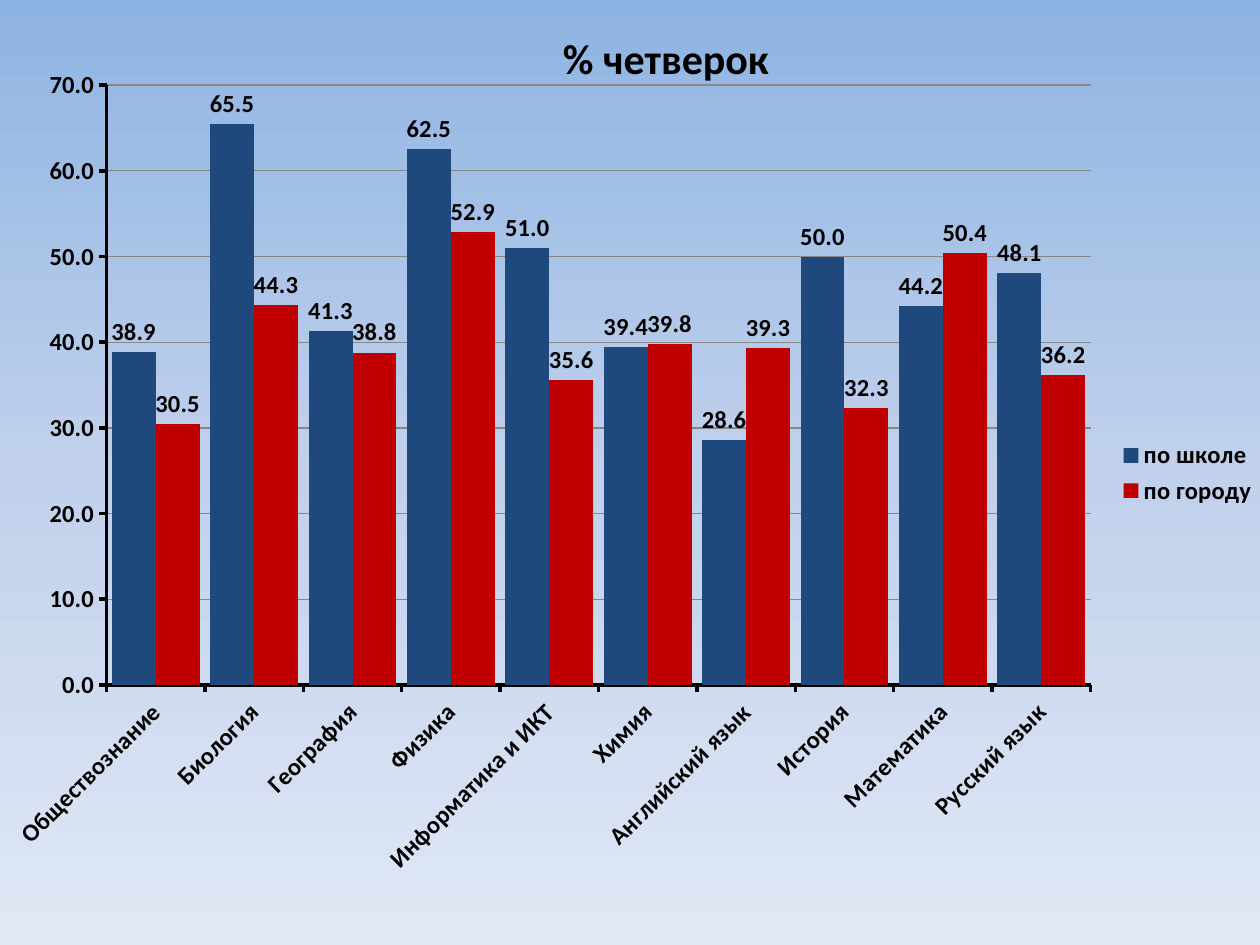
from copy import deepcopy

from pptx import Presentation
from pptx.chart.data import CategoryChartData
from pptx.dml.color import RGBColor
from pptx.enum.chart import (XL_CHART_TYPE, XL_LABEL_POSITION,
                             XL_LEGEND_POSITION, XL_TICK_MARK)
from pptx.enum.text import MSO_ANCHOR, PP_ALIGN
from pptx.oxml import parse_xml
from pptx.oxml.ns import nsdecls, qn
from pptx.util import Inches, Pt

BLACK = RGBColor(0x00, 0x00, 0x00)
GRID_GREY = RGBColor(0x87, 0x87, 0x87)
SCHOOL_BLUE = RGBColor(0x1F, 0x49, 0x7D)
CITY_RED = RGBColor(0xC0, 0x00, 0x00)
SKY = [RGBColor(0x8E, 0xB4, 0xE3), RGBColor(0xC1, 0xD1, 0xEC),
       RGBColor(0xE0, 0xE8, 0xF5)]

SUBJECTS = ["Обществознание", "Биология", "География", "Физика",
            "Информатика и ИКТ", "Химия", "Английский язык", "История",
            "Математика", "Русский язык"]
SERIES = [
    ("по школе", SCHOOL_BLUE,
     [38.9, 65.5, 41.3, 62.5, 51, 39.4, 28.6, 50, 44.2, 48.1]),
    ("по городу", CITY_RED,
     [30.5, 44.3, 38.8, 52.9, 35.6, 39.8, 39.3, 32.3, 50.4, 36.2]),
]
# Inner plot area as fractions of the chart frame
PLOT_AREA = {"x": 0.092, "y": 0.037, "w": 0.768, "h": 0.716}


class SlideBuilder:
    font_name = "Calibri"
    title_size = Pt(24)
    chart_size = Pt(14)

    def __init__(self, slide):
        self.slide = slide

    def style_font(self, font, size):
        font.name = self.font_name
        font.size = size
        font.bold = True
        font.color.rgb = BLACK

    def background(self, colors):
        fill = self.slide.background.fill
        fill.gradient()
        fill.gradient_angle = 270
        # The default gradient has two stops: add a middle one
        stop_list = self.slide.element.find(".//" + qn("a:gsLst"))
        stop_list.insert(1, deepcopy(stop_list[0]))
        for index, (stop, color) in enumerate(zip(fill.gradient_stops, colors)):
            stop.position = index / (len(colors) - 1)
            stop.color.rgb = color

    def title(self, text, left, top, width, height):
        title = self.slide.shapes.title
        title.left, title.top = Inches(left), Inches(top)
        title.width, title.height = Inches(width), Inches(height)
        frame = title.text_frame
        frame.word_wrap = False
        # No side insets, so that the title fits on one line
        frame.margin_left = frame.margin_right = 0
        frame.vertical_anchor = MSO_ANCHOR.TOP
        paragraph = frame.paragraphs[0]
        paragraph.alignment = PP_ALIGN.CENTER
        run = paragraph.add_run()
        run.text = text
        self.style_font(run.font, self.title_size)

    def column_chart(self, categories, series, left, top, width, height):
        data = CategoryChartData(number_format="0.0")
        data.categories = categories
        for name, _, values in series:
            data.add_series(name, values)
        chart = self.slide.shapes.add_chart(
            XL_CHART_TYPE.COLUMN_CLUSTERED, Inches(left), Inches(top),
            Inches(width), Inches(height), data).chart
        chart.has_title = False
        chart.font.name = self.font_name
        chart.font.size = Pt(10)
        chart.font.color.rgb = BLACK

        # Columns and their labels
        plot = chart.plots[0]
        plot.gap_width = 24
        plot.overlap = 0
        plot.vary_by_categories = False
        for column, (_, color, _) in zip(plot.series, series):
            column.format.fill.solid()
            column.format.fill.fore_color.rgb = color
            column.invert_if_negative = False
            labels = column.data_labels
            labels.show_value = True
            labels.position = XL_LABEL_POSITION.OUTSIDE_END
            labels.number_format = "0.0"
            labels.number_format_is_linked = False
            self.style_font(labels.font, self.chart_size)

        self.axes(chart)
        self.place_plot(chart)

        # Legend
        chart.has_legend = True
        chart.legend.position = XL_LEGEND_POSITION.RIGHT
        chart.legend.include_in_layout = False
        self.style_font(chart.legend.font, self.chart_size)

    def axes(self, chart):
        for axis in (chart.category_axis, chart.value_axis):
            axis.major_tick_mark = XL_TICK_MARK.OUTSIDE
            axis.minor_tick_mark = XL_TICK_MARK.NONE
            axis.format.line.color.rgb = BLACK
            axis.format.line.width = Pt(2)
            self.style_font(axis.tick_labels.font, self.chart_size)
        # Slanted subject names
        body = chart.element.xpath(".//c:catAx/c:txPr/a:bodyPr")[0]
        body.set("rot", "-2700000")
        body.set("vert", "horz")

        values = chart.value_axis
        values.minimum_scale, values.maximum_scale = 0, 70
        values.major_unit = 10
        values.tick_labels.number_format = "0.0"
        values.tick_labels.number_format_is_linked = False
        values.has_major_gridlines = True
        values.major_gridlines.format.line.color.rgb = GRID_GREY
        values.major_gridlines.format.line.width = Pt(0.75)

    def place_plot(self, chart):
        plot_area = chart.element.find(".//" + qn("c:plotArea"))
        for layout in plot_area.findall(qn("c:layout")):
            plot_area.remove(layout)
        sizes = "".join(f'<c:{side} val="{value}"/>'
                        for side, value in PLOT_AREA.items())
        plot_area.insert(0, parse_xml(
            f'<c:layout {nsdecls("c")}><c:manualLayout>'
            '<c:layoutTarget val="inner"/><c:xMode val="edge"/>'
            f'<c:yMode val="edge"/>{sizes}</c:manualLayout></c:layout>'))


def main():
    presentation = Presentation()
    presentation.slide_width = Inches(10)
    presentation.slide_height = Inches(7.5)
    title_only = presentation.slide_layouts[5]
    builder = SlideBuilder(presentation.slides.add_slide(title_only))
    builder.background(SKY)
    builder.title("% четверок", 4.37, 0.21, 1.83, 0.51)
    builder.column_chart(SUBJECTS, SERIES, -0.09, 0.43, 10.17, 6.65)
    presentation.save("out.pptx")


if __name__ == "__main__":
    main()
